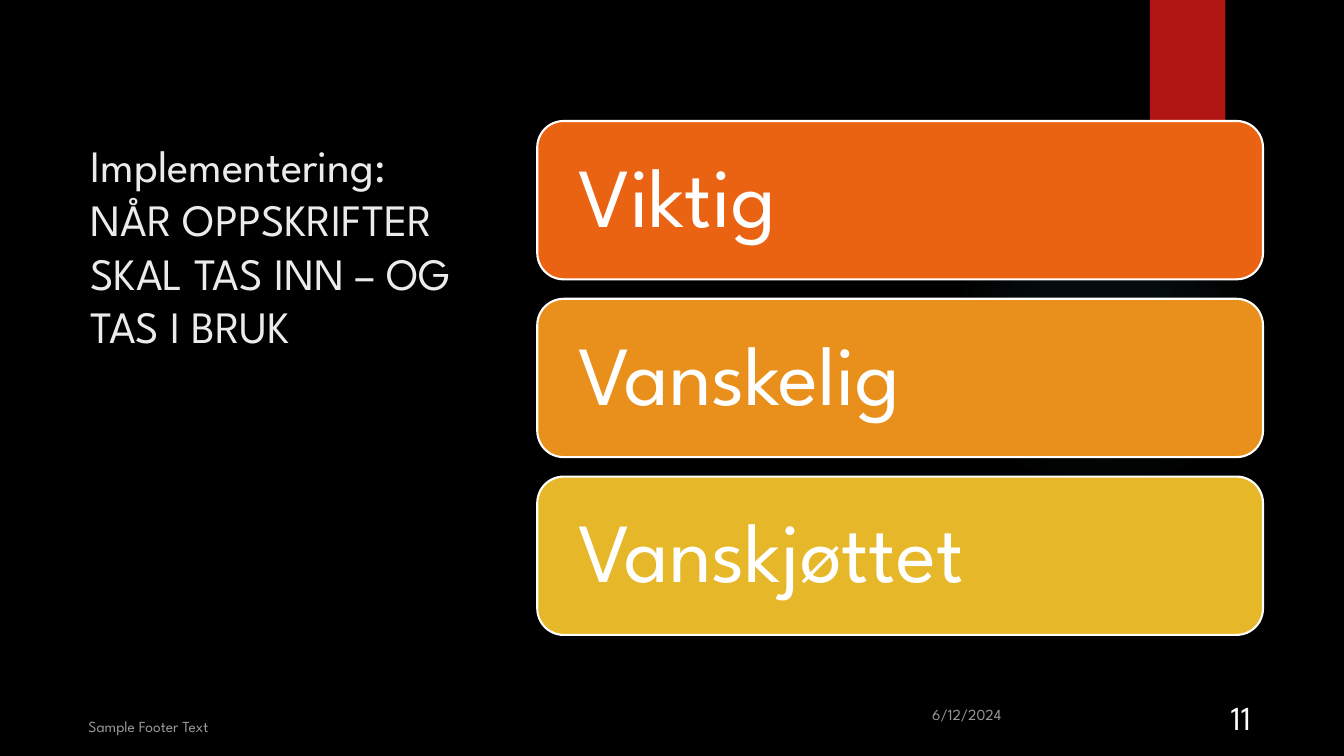
from dataclasses import dataclass

from lxml import etree
from pptx import Presentation
from pptx.dml.color import RGBColor
from pptx.enum.shapes import MSO_SHAPE
from pptx.enum.text import MSO_ANCHOR, PP_ALIGN
from pptx.oxml import parse_xml
from pptx.oxml.ns import nsdecls, qn
from pptx.util import Cm, Pt

RECT = MSO_SHAPE.RECTANGLE
ROUND = MSO_SHAPE.ROUNDED_RECTANGLE
OVAL = MSO_SHAPE.OVAL
TOP, MIDDLE, BOTTOM = MSO_ANCHOR.TOP, MSO_ANCHOR.MIDDLE, MSO_ANCHOR.BOTTOM
LEFT, CENTER = PP_ALIGN.LEFT, PP_ALIGN.CENTER


@dataclass(frozen=True)
class Theme:
    font: str = "League Spartan"
    back: str = "000000"
    white: str = "FFFFFF"
    title: str = "EBEBEB"
    muted: str = "999999"
    ribbon: str = "B01513"
    glow: str = "50B9C1"
    cards: tuple = ("EA6312", "E9901C", "E6B729")
    head: int = 32
    body: int = 60
    small: int = 11
    page: int = 24


THEME = Theme()
CARDS = ("Viktig", "Vanskelig", "Vanskjøttet")


def color(code):
    return RGBColor.from_string(code)


def write(shape, text, size, code, anchor=TOP, align=LEFT):
    frame = shape.text_frame
    frame.word_wrap = True
    frame.vertical_anchor = anchor
    frame.text = text
    para = frame.paragraphs[0]
    para.alignment = align
    for run in para.runs:
        run.font.name = THEME.font
        run.font.size = Pt(size)
        run.font.color.rgb = color(code)
    return para


def add_text(slide, box, *style):
    return write(slide.shapes.add_textbox(*map(Cm, box)), *style)


def add_block(slide, kind, box, code):
    shape = slide.shapes.add_shape(kind, *map(Cm, box))
    shape.shadow.inherit = False
    shape.fill.solid()
    shape.fill.fore_color.rgb = color(code)
    shape.line.fill.background()
    return shape


def add_glow(slide, box):
    props = add_block(slide, OVAL, box, THEME.glow).element.spPr
    grad = parse_xml(f'<a:gradFill {nsdecls("a")}><a:gsLst/></a:gradFill>')
    for pos, alpha in ((0, 7), (36, 6), (69, 0)):
        stop = etree.SubElement(grad[0], qn("a:gs"), pos=str(pos * 1000))
        tint = etree.SubElement(stop, qn("a:srgbClr"), val=THEME.glow)
        etree.SubElement(tint, qn("a:alpha"), val=str(alpha * 1000))
    focus = etree.SubElement(grad, qn("a:path"), path="circle")
    etree.SubElement(focus, qn("a:fillToRect"), l="50000", t="50000", r="50000", b="50000")
    props.replace(props.find(qn("a:solidFill")), grad)


def add_cards(slide, box, gap):
    left, top, width, height = box
    tall = (height - gap * (len(CARDS) - 1)) / len(CARDS)
    for row, (text, code) in enumerate(zip(CARDS, THEME.cards)):
        place = (left, top + row * (tall + gap), width, tall)
        card = add_block(slide, ROUND, place, code)
        card.line.color.rgb = color(THEME.white)
        card.line.width = Pt(1.5)
        card.text_frame.margin_left = Cm(0.84)
        para = write(card, text, THEME.body, THEME.white, MIDDLE)
        para.line_spacing = 0.9


def add_footer(slide, box):
    left, top, width, height = box
    small = (THEME.small, THEME.muted)
    add_text(slide, (left, top, 12.6, height), "Sample Footer Text", *small, BOTTOM)
    add_text(slide, (left + 21.26, top, 7.21, height), "6/12/2024", *small)
    page = (left + width - 1.88, top, 1.88, height)
    para = add_text(slide, page, "11", THEME.page, THEME.white, BOTTOM, CENTER)
    para.line_spacing = 0.7


def main():
    deck = Presentation()
    deck.slide_width, deck.slide_height = Cm(33.87), Cm(19.05)
    slide = deck.slides.add_slide(deck.slide_layouts[6])
    slide.background.fill.solid()
    slide.background.fill.fore_color.rgb = color(THEME.back)
    add_glow(slide, (23.9, 4.65, 7.82, 7.82))
    add_block(slide, RECT, (28.98, 0, 1.9, 3.18), THEME.ribbon)
    title = "Implementering:\vNÅR OPPSKRIFTER SKAL TAS INN – OG TAS I BRUK"
    add_text(slide, (2.03, 3.35, 10.16, 11.4), title, THEME.head, THEME.title)
    add_cards(slide, (13.54, 3.05, 18.29, 12.95), 0.49)
    add_footer(slide, (1.98, 17.65, 30.23, 1.02))
    deck.save("out.pptx")


if __name__ == "__main__":
    main()
